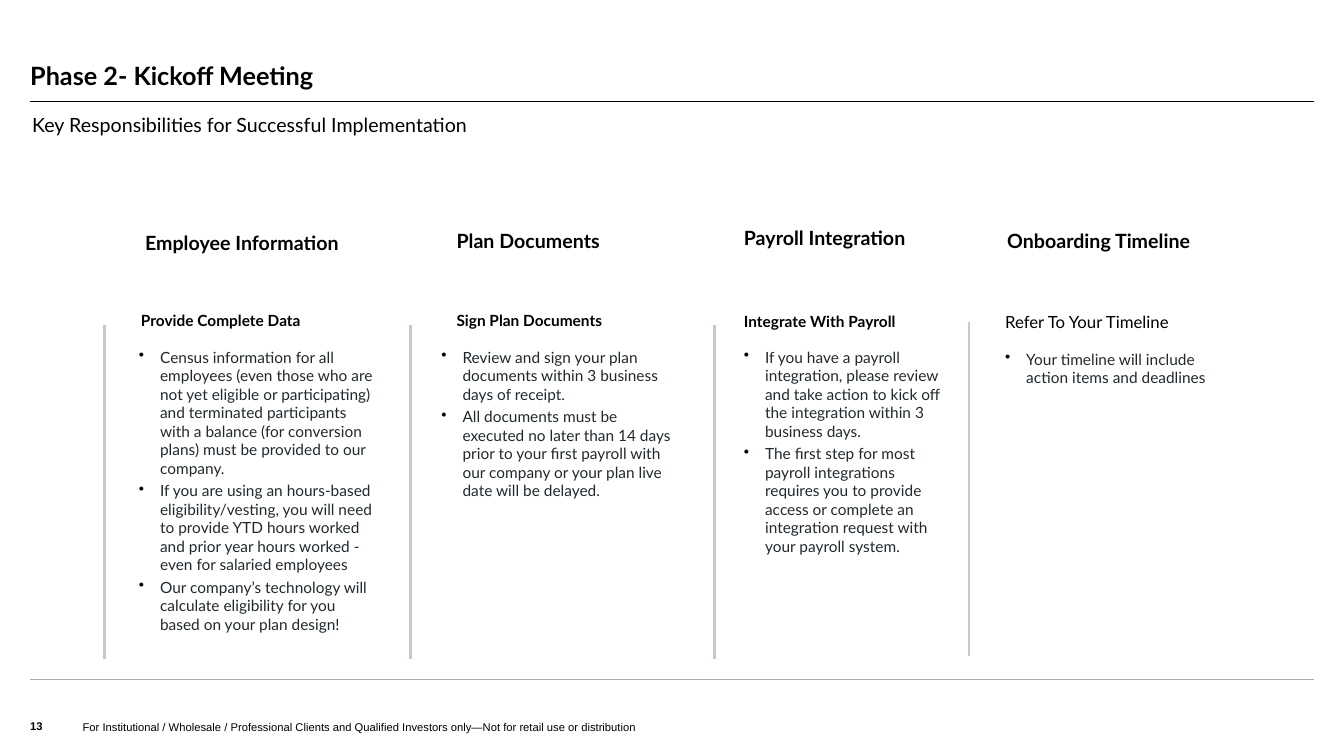
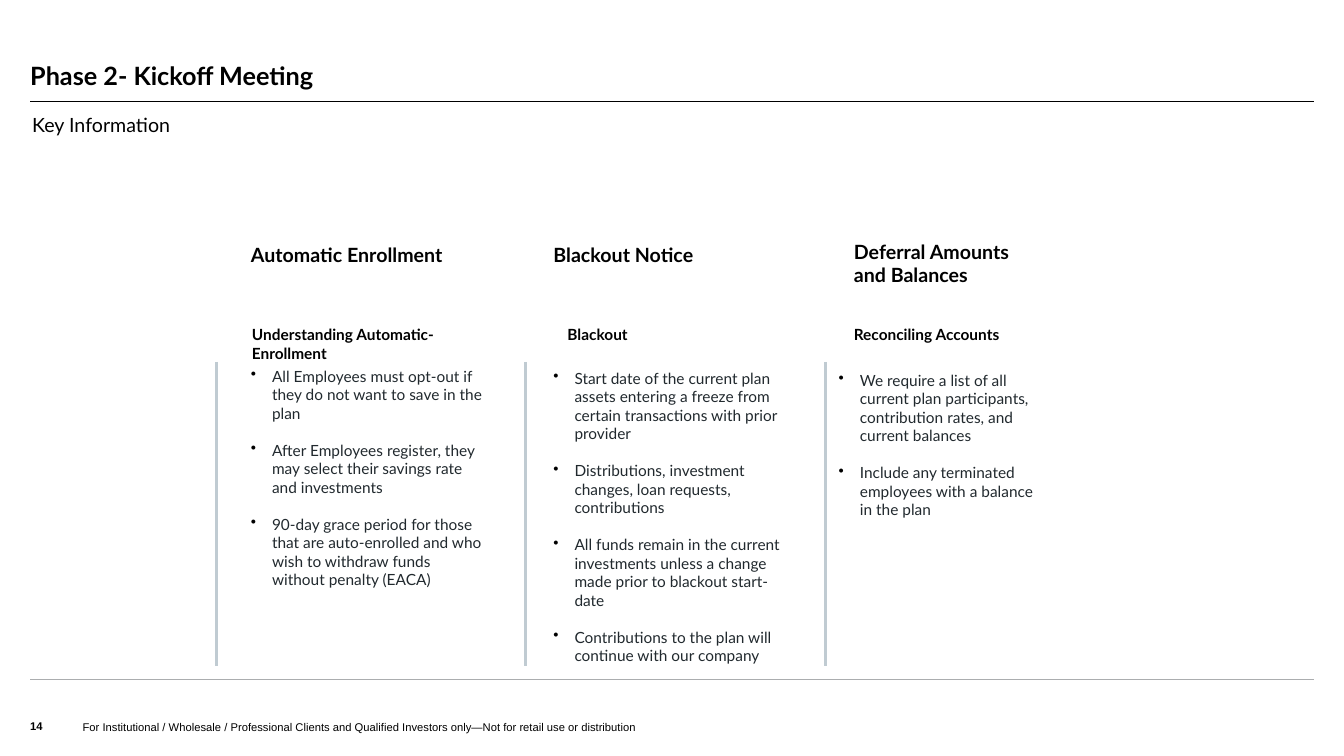
from lxml import etree
from pptx import Presentation, util as u
from pptx.dml.color import RGBColor
from pptx.enum import shapes, text
from pptx.oxml import ns

PX = 9144  # 100 px to the inch
COLORS = {"ink": "000000", "body": "21292E", "divider": "C0CBD2", "footer": "ABADAF"}
LEFT, RIGHT = 30, 1303
INDENT = 21
TITLE = "Phase 2- Kickoff Meeting"
DISCLAIMER = (
    "For Institutional / Wholesale / Professional Clients and Qualified Investors only"
    "—Not for retail use or distribution"
)

# Each column has a divider (x, top), then boxes (left, top, width, height) with their text.
PAGES = [
    {
        "number": 13,
        "subtitle": "Key Responsibilities for Successful Implementation",
        "divider_height": 332,
        "bullet_gap": 3,
        "columns": [
            {
                "divider": (104, 322),
                "heading": ((134, 224, 221, 34), "Employee Information"),
                "label": ((130, 304, 254, 29), "Provide Complete Data"),
                "bullets": ((128, 340, 254, 349), [
                    "Census information for all employees (even those who are not yet eligible or "
                    "participating) and terminated participants with a balance (for conversion "
                    "plans) must be provided to our company.",
                    "If you are using an hours-based eligibility/vesting, you will need to provide "
                    "YTD hours worked and prior year hours worked - even for salaried employees",
                    "Our company’s technology will calculate eligibility for you based on your "
                    "plan design!",
                ]),
            },
            {
                "divider": (407, 322),
                "heading": ((443, 222, 180, 34), "Plan Documents"),
                "label": ((443, 304, 224, 29), "Sign Plan Documents"),
                "bullets": ((428, 340, 254, 162), [
                    "Review and sign your plan documents within 3 business days of receipt.",
                    "All documents must be executed no later than 14 days prior to your first "
                    "payroll with our company or your plan live date will be delayed.",
                ]),
            },
            {
                "divider": (709, 322),
                "heading": ((728, 219, 190, 34), "Payroll Integration"),
                "label": ((728, 305, 204, 29), "Integrate With Payroll"),
                "bullets": ((728, 340, 219, 218), [
                    "If you have a payroll integration, please review and take action to kick off "
                    "the integration within 3 business days.",
                    "The first step for most payroll integrations requires you to provide access "
                    "or complete an integration request with your payroll system.",
                ]),
            },
            {
                "divider": (961, 319),
                "heading": ((989, 222, 202, 57), "Onboarding Timeline"),
                "label": ((987, 304, 204, 30), "Refer To Your Timeline"),
                "label_style": {"size": 12, "bold": False},
                "bullets": ((987, 342, 219, 66), [
                    "Your timeline will include action items and deadlines",
                ]),
            },
        ],
    },
    {
        "number": 14,
        "subtitle": "Key Information",
        "divider_height": 302,
        "bullet_gap": 13.2,
        "columns": [
            {
                "divider": (215, 359),
                "heading": ((239, 236, 229, 34), "Automatic Enrollment"),
                "label": ((240, 318, 254, 67), "Understanding Automatic-Enrollment"),
                "bullets": ((239, 359, 254, 285), [
                    "All Employees must opt-out if they do not want to save in the plan",
                    "After Employees register, they may select their savings rate and investments",
                    "90-day grace period for those that are auto-enrolled and who wish to withdraw "
                    "funds without penalty (EACA)",
                ]),
            },
            {
                "divider": (521, 359),
                "heading": ((539, 236, 195, 34), "Blackout Notice"),
                "label": ((553, 318, 224, 29), "Blackout"),
                "bullets": ((539, 361, 254, 306), [
                    "Start date of the current plan assets entering a freeze from certain "
                    "transactions with prior provider",
                    "Distributions, investment changes, loan requests, contributions",
                    "All funds remain in the current investments unless a change made prior to "
                    "blackout start-date",
                    "Contributions to the plan will continue with our company",
                ]),
            },
            {
                "divider": (819, 359),
                "heading": ((837, 233, 181, 57), "Deferral Amounts and Balances"),
                "label": ((837, 318, 204, 29), "Reconciling Accounts"),
                "bullets": ((822, 363, 219, 195), [
                    "We require a list of all current plan participants, contribution rates, and "
                    "current balances",
                    "Include any terminated employees with a balance in the plan",
                ]),
            },
        ],
    },
]


def add_text(page, area, lines, size, bold=False, color="ink", font="Lato",
             flush=False, bullet_gap=None):
    """Add a text box; flush drops the insets and anchors low, bullet_gap turns on bullets."""
    box = page.shapes.add_textbox(*(value * PX for value in area))
    frame = box.text_frame
    frame.text = "\n".join(lines)
    frame.word_wrap = True
    if flush:
        frame.margin_left = frame.margin_right = frame.margin_top = frame.margin_bottom = 0
        frame.vertical_anchor = text.MSO_ANCHOR.BOTTOM
    for index, para in enumerate(frame.paragraphs):
        if bullet_gap is not None:
            props = para._p.get_or_add_pPr()
            props.set("marL", str(INDENT * PX))
            props.set("indent", str(-INDENT * PX))
            tint = etree.SubElement(props, ns.qn("a:buClr"))
            etree.SubElement(tint, ns.qn("a:srgbClr"), val=COLORS["ink"])
            etree.SubElement(props, ns.qn("a:buChar"), char="•")
            if index:
                para.space_before = u.Pt(bullet_gap)
        for span in para.runs:
            span.font.name = font
            span.font.size = u.Pt(size)
            span.font.bold = bold
            span.font.color.rgb = RGBColor.from_string(COLORS[color])
    return box


def add_line(page, start, end, color, width):
    line = page.shapes.add_connector(
        shapes.MSO_CONNECTOR.STRAIGHT, *(value * PX for value in start + end))
    line.line.color.rgb = RGBColor.from_string(COLORS[color])
    line.line.width = u.Pt(width)
    etree.SubElement(line._element.spPr, ns.qn("a:effectLst"))


deck = Presentation()
deck.slide_width, deck.slide_height = 1333 * PX, 750 * PX

for content in PAGES:
    page = deck.slides.add_slide(deck.slide_layouts[6])

    # Title, rules and footer
    title = add_text(page, (LEFT, 30, RIGHT - LEFT, 60), [TITLE], 18, bold=True, flush=True)
    title.text_frame.paragraphs[0].line_spacing = 0.9
    add_line(page, (LEFT, 101), (RIGHT, 101), "ink", 0.5)
    add_text(page, (22, 107, RIGHT - LEFT, 49), [content["subtitle"]], 14)
    add_line(page, (LEFT, 674), (RIGHT, 674), "footer", 0.5)
    add_text(page, (LEFT, 706, 38, 21), [str(content["number"])], 8,
             bold=True, font="Arial", flush=True)
    add_text(page, (82, 706, 1063, 22), [DISCLAIMER], 8, font="Arial", flush=True)

    for column in content["columns"]:
        x, top = column["divider"]
        add_line(page, (x, top), (x, top + content["divider_height"]), "divider", 2)
        area, heading = column["heading"]
        add_text(page, area, [heading], 14, bold=True)
        area, label = column["label"]
        add_text(page, area, [label], **column.get("label_style", {"size": 11, "bold": True}))
        area, bullets = column["bullets"]
        add_text(page, area, bullets, 11, color="body", bullet_gap=content["bullet_gap"])

deck.save("out.pptx")
